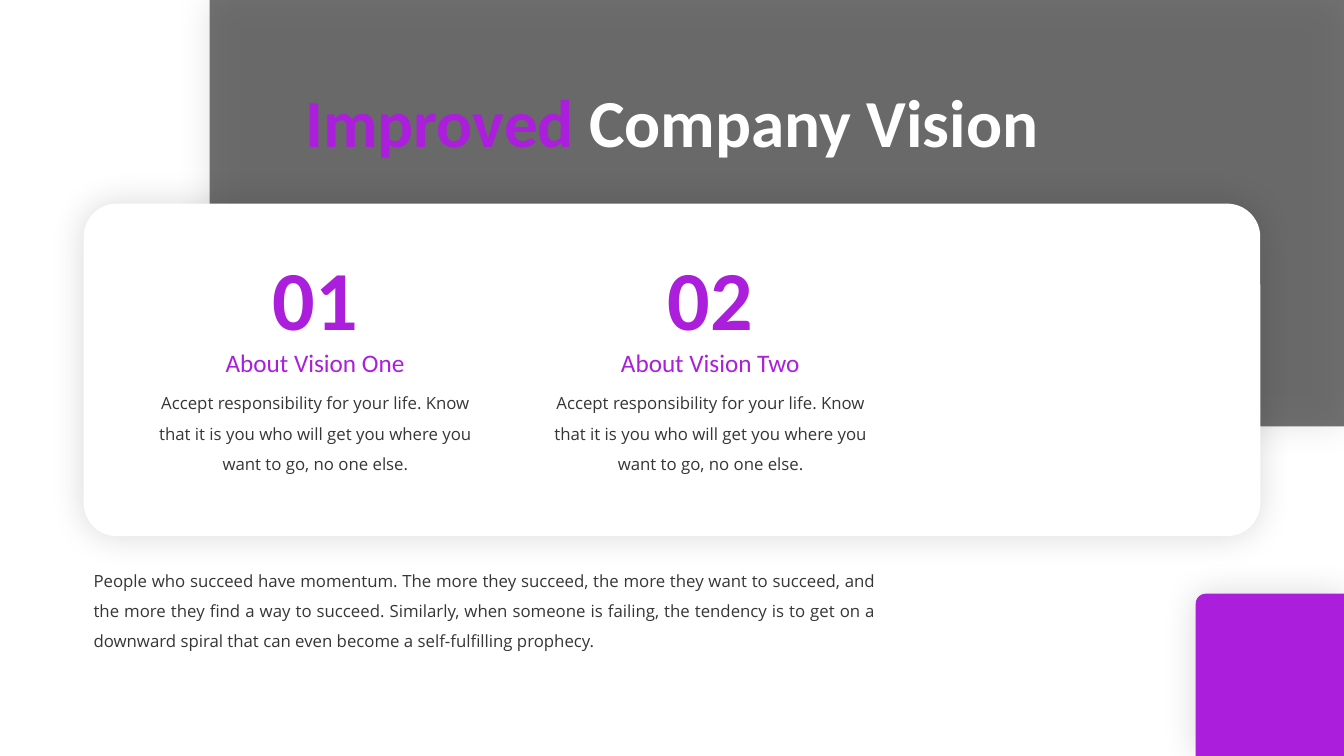
from dataclasses import dataclass
from math import cos, pi, sin

from lxml import etree
from pptx import Presentation
from pptx.dml.color import RGBColor
from pptx.enum.shapes import MSO_SHAPE
from pptx.enum.text import MSO_AUTO_SIZE, PP_ALIGN
from pptx.oxml.ns import qn
from pptx.util import Inches, Pt

RECTANGLE, ROUNDED = MSO_SHAPE.RECTANGLE, MSO_SHAPE.ROUNDED_RECTANGLE
CENTER, JUSTIFY = PP_ALIGN.CENTER, PP_ALIGN.JUSTIFY
FIT_SHAPE = MSO_AUTO_SIZE.SHAPE_TO_FIT_TEXT


@dataclass(frozen=True)
class Theme:
    accent: RGBColor = RGBColor(0xAA, 0x1E, 0xDC)
    dark: RGBColor = RGBColor(0x36, 0x36, 0x36)
    white: RGBColor = RGBColor(0xFF, 0xFF, 0xFF)
    heading_font: str = "Calibri"
    body_font: str = "Open Sans"
    title: int = 48
    number: int = 60
    subtitle: int = 18
    body: int = 12


theme = Theme()
prs = Presentation()
prs.slide_width, prs.slide_height = Inches(13.33), Inches(7.5)
slide = prs.slides.add_slide(prs.slide_layouts[6])


def style_panel(panel, color):
    """Solid fill, no outline and a soft shadow on all sides."""
    panel.fill.solid()
    panel.fill.fore_color.rgb = color
    panel.line.fill.background()
    panel.shadow.inherit = False
    effects = panel.element.spPr.find(qn("a:effectLst"))
    shadow = etree.SubElement(effects, qn("a:outerShdw"), blurRad=str(Pt(25)),
                              dist="0", dir="0", algn="ctr", rotWithShape="0")
    shade = etree.SubElement(shadow, qn("a:srgbClr"), val="000000")
    etree.SubElement(shade, qn("a:alpha"), val="15000")


def add_text(box, runs, size, font, align=CENTER, bold=False, spacing=None):
    """Add one paragraph made of (text, color) runs."""
    frame = slide.shapes.add_textbox(*map(Inches, box)).text_frame
    frame.word_wrap = True
    frame.auto_size = FIT_SHAPE
    paragraph = frame.paragraphs[0]
    paragraph.alignment = align
    paragraph.line_spacing = spacing
    paragraph.font.size = Pt(size)
    paragraph.font.name = font
    paragraph.font.bold = bold
    for text, color in runs:
        run = paragraph.add_run()
        run.text = text
        run.font.color.rgb = color


# Dark banner with the title
banner = slide.shapes.add_shape(RECTANGLE, Inches(2.08), 0, Inches(11.25), Inches(4.23))
style_panel(banner, theme.dark)
banner_color = banner.element.spPr.find(qn("a:solidFill"))[0]
etree.SubElement(banner_color, qn("a:alpha"), val="70000")
add_text((1.77, 0.75, 9.79, 0.91),
         [("Improved ", theme.accent), ("Company Vision", theme.white)],
         theme.title, theme.heading_font, bold=True)

# White card
card = slide.shapes.add_shape(ROUNDED, Inches(0.83), Inches(2.02), Inches(11.67), Inches(3.3))
card.adjustments[0] = 0.1
style_panel(card, theme.white)

# Vision columns
vision_text = ("Accept responsibility for your life. Know that it is you who will "
               "get you where you want to go, no one else.")
for column, name in enumerate(["One", "Two"]):
    left = 1.67 + column * 3.92
    add_text((left, 3.4, 2.91, 0.4), [(f"About Vision {name}", theme.accent)],
             theme.subtitle, theme.heading_font)
    add_text((left - 0.21, 3.75, 3.34, 1.01), [(vision_text, theme.dark)],
             theme.body, theme.body_font, spacing=1.5)
    add_text((left, 2.4, 2.91, 1.11), [(f"{column + 1:02d}", theme.accent)],
             theme.number, theme.heading_font, bold=True)

# Closing paragraph
momentum_text = ("People who succeed have momentum. The more they succeed, the more they "
                 "want to succeed, and the more they find a way to succeed. Similarly, "
                 "when someone is failing, the tendency is to get on a downward spiral "
                 "that can even become a self-fulfilling prophecy.")
add_text((0.83, 5.51, 7.96, 1.01), [(momentum_text, theme.dark)],
         theme.body, theme.body_font, align=JUSTIFY, spacing=1.5)

# Corner block, rounded at its top left
left, top, right, bottom, radius = 11.86, 5.89, 13.33, 7.5, 0.1
steps = 12
arc = [(left + radius * (1 - cos(angle)), top + radius * (1 - sin(angle)))
       for angle in (step * pi / 2 / steps for step in range(steps + 1))]
outline = [(Inches(x), Inches(y)) for x, y in [(right, bottom), (left, bottom), *arc]]
corner_builder = slide.shapes.build_freeform(Inches(right), Inches(top))
corner_builder.add_line_segments(outline, close=True)
style_panel(corner_builder.convert_to_shape(), theme.accent)

prs.save("out.pptx")
